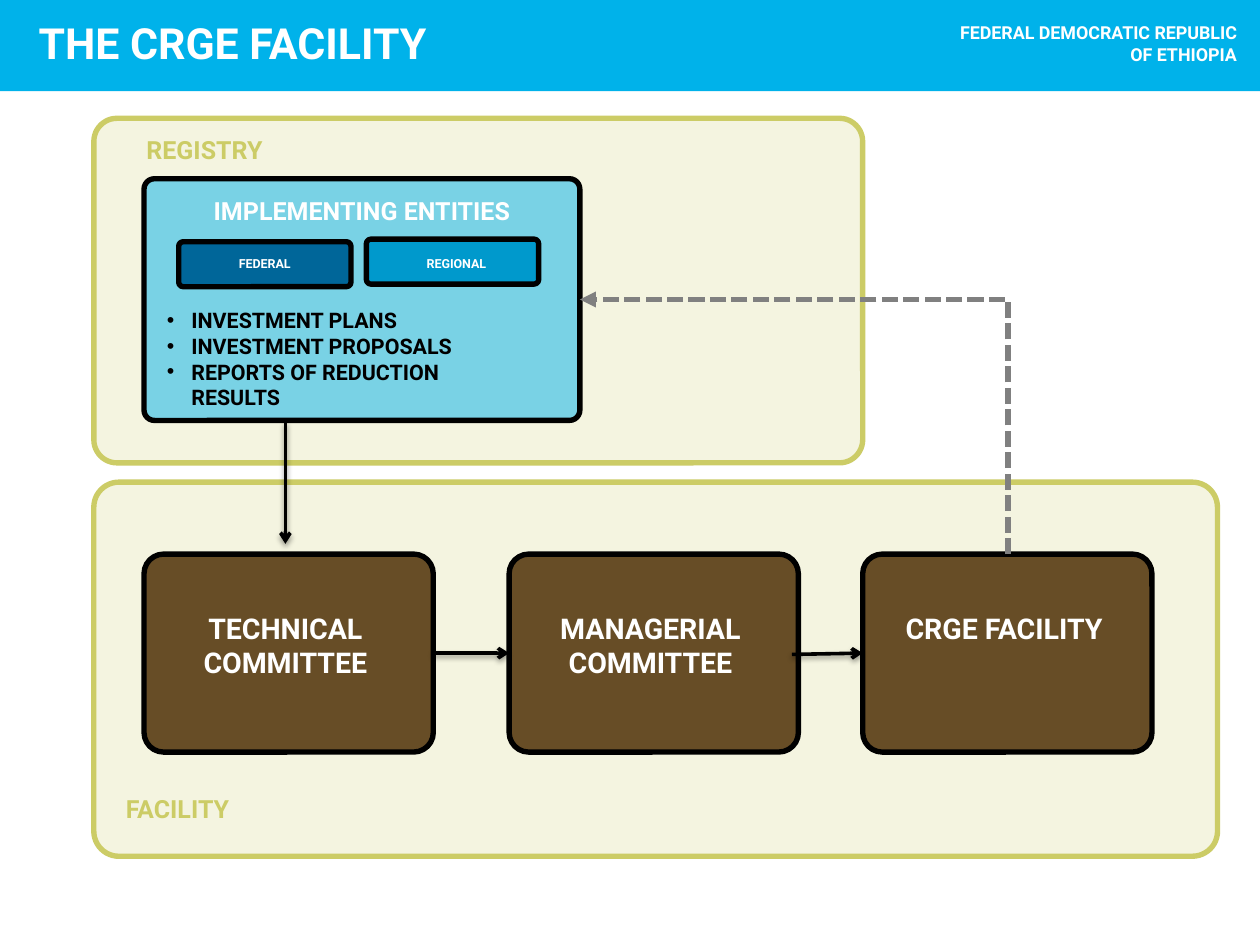
from lxml import etree
from pptx import Presentation, util as u
from pptx.dml.color import RGBColor
from pptx.enum import dml, shapes, text
from pptx.oxml import parse_xml
from pptx.oxml.ns import nsdecls, qn

SCALE = 9144  # EMU in one px, 100 px to the inch
FONT = "Roboto"
WHITE, BLACK, GREY = "FFFFFF", "000000", "808080"
CYAN, OLIVE, BROWN = "00B2EA", "CCCC66", "674D26"
BLUE, SKY = "006699", "0099CC"
SHADOW = (f'<a:effectLst {nsdecls("a")}><a:outerShdw blurRad="39370" dist="20320" '
          'dir="5400000" rotWithShape="0"><a:srgbClr val="000000">'
          '<a:alpha val="38000"/></a:srgbClr></a:outerShdw></a:effectLst>')
PLAIN = f'<a:effectLst {nsdecls("a")}/>'


def px(n):
    return u.Emu(n * SCALE)


def rgb(code):
    return RGBColor.from_string(code)


class Board:
    def __init__(self, wide, high):
        self.deck = Presentation()
        self.deck.slide_width, self.deck.slide_height = px(wide), px(high)
        self.slide = self.deck.slides.add_slide(self.deck.slide_layouts[5])
        self.tree = self.slide.shapes

    def box(self, at, fill, line=None, round=None, alpha=None):
        kind = shapes.MSO_SHAPE.RECTANGLE
        if round is not None:
            kind = shapes.MSO_SHAPE.ROUNDED_RECTANGLE
        box = self.tree.add_shape(kind, *map(px, at))
        box.shadow.inherit = False
        if round is not None:
            box.adjustments[0] = round
        box.fill.solid()
        box.fill.fore_color.rgb = rgb(fill)
        if alpha is not None:
            tint = box._element.spPr.find(qn("a:solidFill"))[0]
            etree.SubElement(tint, qn("a:alpha"), val=str(alpha * 1000))
        if line:
            box.line.color.rgb = rgb(line)
            box.line.width = u.Pt(3)
        else:
            box.line.fill.background()
        return box

    def words(self, shape, lines, size, color, align="LEFT", inset=True, anchor="TOP",
              bullet=False):
        frame = shape.text_frame
        form = {"word_wrap": True, "auto_size": text.MSO_AUTO_SIZE.NONE,
                "vertical_anchor": text.MSO_ANCHOR[anchor]}
        if not inset:
            form.update({f"margin_{side}": 0 for side in ("left", "top", "right", "bottom")})
        for key, value in form.items():
            setattr(frame, key, value)
        for i, line in enumerate(lines):
            para = frame.add_paragraph() if i else frame.paragraphs[0]
            para.alignment = text.PP_ALIGN[align]
            run = para.add_run()
            run.text = line
            for key, value in {"name": FONT, "size": u.Pt(size), "bold": True}.items():
                setattr(run.font, key, value)
            run.font.color.rgb = rgb(color)
            if bullet:
                prop = para._p.get_or_add_pPr()
                prop.set("marL", str(px(19)))
                prop.set("indent", str(px(-19)))
                etree.SubElement(prop, qn("a:buFont"), typeface="Arial")
                etree.SubElement(prop, qn("a:buChar"), char="•")

    def label(self, at, lines, size, color, **form):
        self.words(self.tree.add_textbox(*map(px, at)), lines, size, color, **form)

    def title(self, at, line, size, color):
        head = self.tree.title
        for key, value in zip(("left", "top", "width", "height"), at):
            setattr(head, key, px(value))
        self.words(head, [line], size, color, inset=False, anchor="BOTTOM")
        self.tree._spTree.append(head._element)  # in front of the header bar

    def arrow(self, start, end, color=BLACK, width=2, head="arrow", effect=SHADOW,
              kind="STRAIGHT"):
        link = self.tree.add_connector(shapes.MSO_CONNECTOR[kind], *map(px, start + end))
        link.line.color.rgb = rgb(color)
        link.line.width = u.Pt(width)
        if kind == "ELBOW":
            link.line.dash_style = dml.MSO_LINE.SQUARE_DOT
        prop = link._element.spPr
        etree.SubElement(prop.find(qn("a:ln")), qn("a:tailEnd"), type=head)
        prop.append(parse_xml(effect))
        return link

    def corner(self, start, end, first, last):
        """One-bend arrow that leaves upwards and arrives leftwards."""
        link = self.arrow(start, end, GREY, 3, "triangle", PLAIN, "ELBOW")
        link.begin_connect(first, 0)
        link.end_connect(last, 3)
        wide, high = start[0] - end[0], start[1] - end[1]
        midx, midy = (start[0] + end[0]) / 2, (start[1] + end[1]) / 2
        place = {"left": midx - high / 2, "top": midy - wide / 2,
                 "width": high, "height": wide}
        for key, value in place.items():
            setattr(link, key, u.Emu(int(value * SCALE)))
        prop = link._element.spPr
        frame = prop.find(qn("a:xfrm"))
        for key, value in {"rot": "16200000", "flipH": "0", "flipV": "1"}.items():
            frame.set(key, value)
        prop.find(qn("a:prstGeom")).set("prst", "bentConnector2")


def main():
    board = Board(980, 735)

    # Registry and facility panels
    for at in ((73, 92, 598, 268), (73, 375, 874, 291)):
        board.box(at, OLIVE, OLIVE, 0.067, 20)
    board.label((104, 100, 268, 34), ["REGISTRY"], 14, OLIVE)
    board.label((88, 612, 268, 34), ["FACILITY"], 14, OLIVE)

    # Header
    board.box((0, 0, 980, 71), CYAN)
    board.title((30, 13, 683, 40), "THE CRGE FACILITY", 24, WHITE)
    board.label((734, 17, 228, 50), ["FEDERAL DEMOCRATIC REPUBLIC OF ETHIOPIA"],
                10, WHITE, align="RIGHT", inset=False)

    # Committees and facility
    stages = []
    for left, name in ((112, "TECHNICAL COMMITTEE"), (396, "MANAGERIAL COMMITTEE"),
                       (671, "CRGE FACILITY")):
        stages.append(board.box((left, 431, 225, 154), BROWN, BLACK, 0.099))
        board.label((left, 470, 220, 64), [name], 16, WHITE, align="CENTER")
    tech, manage, fund = stages

    # Implementing entities
    entity = board.box((112, 139, 339, 188), CYAN, BLACK, 0.043, 50)
    board.label((112, 147, 339, 34), ["IMPLEMENTING ENTITIES"], 14, WHITE, align="CENTER")
    for left, top, start, fill, name in ((139, 188, 136, BLUE, "FEDERAL"),
                                         (285, 186, 285, SKY, "REGIONAL")):
        board.box((left, top, 134, 35), fill, BLACK, 0.099)
        board.label((start, 194, 140, 22), [name], 7, WHITE, align="CENTER")
    board.label((120, 234, 268, 91), ["INVESTMENT PLANS", "INVESTMENT PROPOSALS",
                                      "REPORTS OF REDUCTION RESULTS"],
                12, BLACK, bullet=True)

    # Flow
    board.arrow((222, 328), (222, 423))
    link = board.arrow((337, 508), (396, 508))
    link.begin_connect(tech, 3)
    link.end_connect(manage, 1)
    board.arrow((616, 509), (671, 508)).end_connect(fund, 1)
    board.corner((784, 431), (451, 233), fund, entity)

    board.deck.save("out.pptx")


if __name__ == "__main__":
    main()
